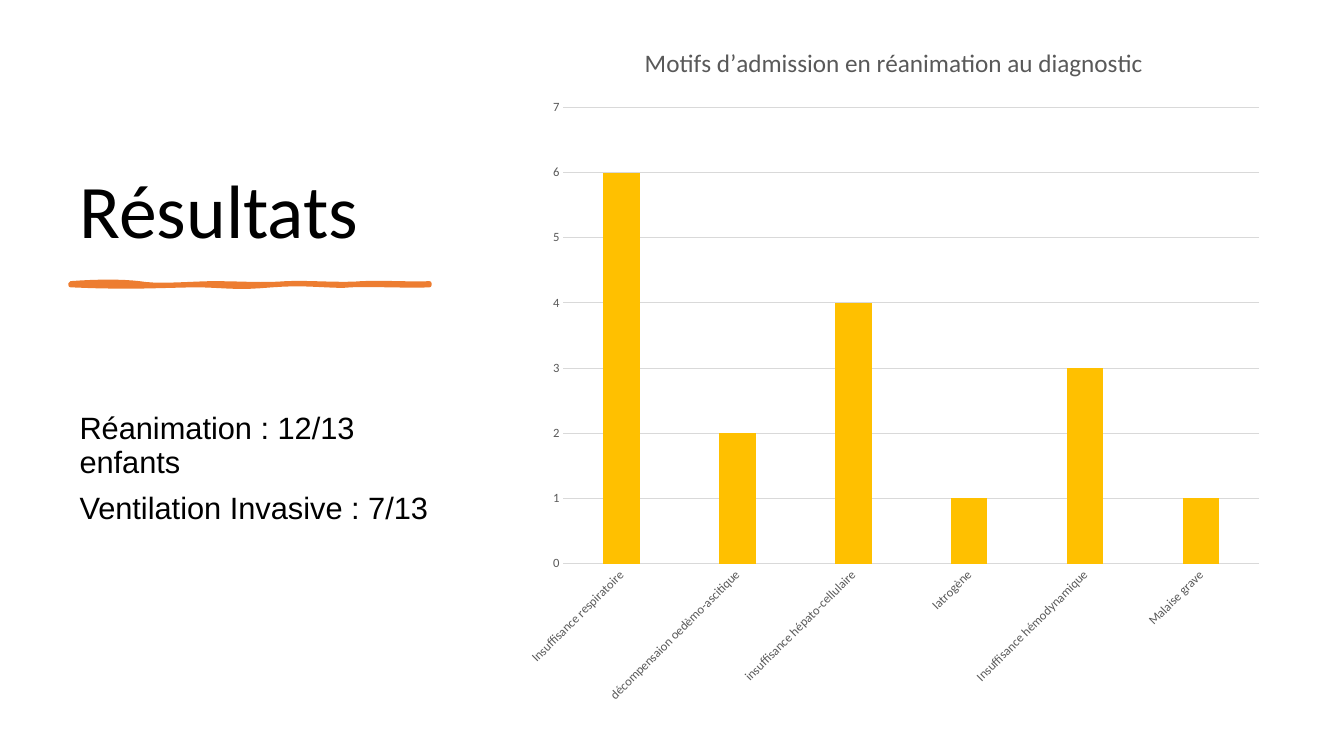
"""Build the results slide: heading, key figures and admission-reason chart."""
from lxml import etree
from pptx import Presentation
from pptx import util as u
from pptx.chart import data as chart_data
from pptx.dml import color as dml
from pptx.enum import chart as charts, text
from pptx.oxml import ns

presentation = Presentation()
presentation.slide_width = u.Inches(13.33)
presentation.slide_height = u.Inches(7.5)
slide = presentation.slides.add_slide(presentation.slide_layouts[6])


def paint(color_format, value):
    color_format.rgb = dml.RGBColor.from_string(value)


MARGIN, COLUMN = 0.69, 3.75
TEXT_BLOCKS = [
    (0.7, 1.88, text.MSO_ANCHOR.BOTTOM, "Calibri", 54, ["Résultats"]),
    (4.05, 2.75, text.MSO_ANCHOR.TOP, "Arial", 22,
     ["Réanimation : 12/13 enfants", "Ventilation Invasive : 7/13"]),
]
for top, height, anchor, font_name, size, lines in TEXT_BLOCKS:
    box = slide.shapes.add_textbox(*map(u.Inches, (MARGIN, top, COLUMN, height)))
    frame = box.text_frame
    frame.word_wrap = True
    frame.vertical_anchor = anchor
    frame.text = "\n".join(lines)
    for index, paragraph in enumerate(frame.paragraphs):
        paragraph.line_spacing = 0.9
        paragraph.space_before = u.Pt(9.5 if index else 0)
        paragraph.font.name = font_name
        paragraph.font.size = u.Pt(size)
        paint(paragraph.font.color, "000000")

STROKE_START = (0.7, 2.81)
STROKE_CURVES = [
    ((0.97, 2.79), (1.21, 2.79), (1.38, 2.81)),
    ((1.55, 2.84), (1.77, 2.82), (2.09, 2.81)),
    ((2.41, 2.81), (2.6, 2.83), (2.84, 2.81)),
    ((3.08, 2.8), (3.39, 2.83), (3.59, 2.81)),
    ((3.79, 2.8), (4.12, 2.82), (4.26, 2.81)),
    ((4.26, 2.82), (4.26, 2.83), (4.26, 2.83)),
    ((4.08, 2.84), (3.64, 2.82), (3.48, 2.83)),
    ((3.32, 2.85), (3.04, 2.8), (2.7, 2.83)),
    ((2.35, 2.86), (2.31, 2.84), (1.99, 2.83)),
    ((1.66, 2.83), (1.32, 2.86), (0.7, 2.83)),
]
STEPS = 8
points = [STROKE_START]
for first, second, end in STROKE_CURVES:
    start = points[-1]
    for step in range(1, STEPS + 1):
        t = step / STEPS
        points.append(tuple(
            (1 - t) ** 3 * a + 3 * t * (1 - t) ** 2 * b + 3 * t ** 2 * (1 - t) * c + t ** 3 * d
            for a, b, c, d in zip(start, first, second, end)))
outline = [(u.Inches(x), u.Inches(y)) for x, y in points]
builder = slide.shapes.build_freeform(*outline[0])
builder.add_line_segments(outline[1:], close=True)
brush_stroke = builder.convert_to_shape()
brush_stroke.shadow.inherit = False
brush_stroke.fill.solid()
paint(brush_stroke.fill.fore_color, "ED7D31")
paint(brush_stroke.line.color, "ED7D31")
brush_stroke.line.width = u.Pt(3)

admissions = chart_data.CategoryChartData()
admissions.categories = [
    "Insuffisance respiratoire", "décompensaion oedèmo-ascitique",
    "insuffisance hépato-cellulaire", "Iatrogène",
    "Insuffisance hémodynamique", "Malaise grave",
]
admissions.add_series("Series 1", [6, 2, 4, 1, 3, 1])
chart = slide.shapes.add_chart(
    charts.XL_CHART_TYPE.COLUMN_CLUSTERED,
    *map(u.Inches, (5.09, 0.21, 7.55, 6.9)), admissions).chart
chart.has_legend = False
chart.font.name = "Calibri"
chart.font.size = u.Pt(10)

chart.has_title = True
chart.chart_title.include_in_layout = False
title_frame = chart.chart_title.text_frame
title_frame.text = "Motifs d’admission en réanimation au diagnostic"
title_font = title_frame.paragraphs[0].font
title_font.name = "Calibri"
title_font.size = u.Pt(18)
title_font.bold = False
paint(title_font.color, "595959")

plot = chart.plots[0]
plot.gap_width = 219
plot.overlap = -27
plot.vary_by_categories = False
bars = plot.series[0].format.fill
bars.solid()
paint(bars.fore_color, "FFC000")

category_axis, value_axis = chart.category_axis, chart.value_axis
for axis in (category_axis, value_axis):
    axis.major_tick_mark = charts.XL_TICK_MARK.NONE
    axis.minor_tick_mark = charts.XL_TICK_MARK.NONE
    axis.tick_labels.font.name = "Calibri"
    axis.tick_labels.font.size = u.Pt(9)
    paint(axis.tick_labels.font.color, "595959")
value_axis.minimum_scale, value_axis.maximum_scale, value_axis.major_unit = 0, 7, 1
value_axis.format.line.fill.background()
for line in (category_axis.format.line, value_axis.major_gridlines.format.line):
    paint(line.color, "D9D9D9")
    line.width = u.Pt(0.75)
label_body = category_axis._element.find(ns.qn("c:txPr")).find(ns.qn("a:bodyPr"))
label_body.set("rot", str(-45 * 60000))

plot_area = chart._chartSpace.chart.plotArea
for old_layout in plot_area.findall(ns.qn("c:layout")):
    plot_area.remove(old_layout)
layout = etree.Element(ns.qn("c:layout"))
manual = etree.SubElement(layout, ns.qn("c:manualLayout"))
for tag, value in [("layoutTarget", "inner"), ("xMode", "edge"), ("yMode", "edge"),
                   ("x", 0.066), ("y", 0.124), ("w", 0.914), ("h", 0.656)]:
    etree.SubElement(manual, ns.qn("c:" + tag)).set("val", str(value))
plot_area.insert(0, layout)

presentation.save("out.pptx")
